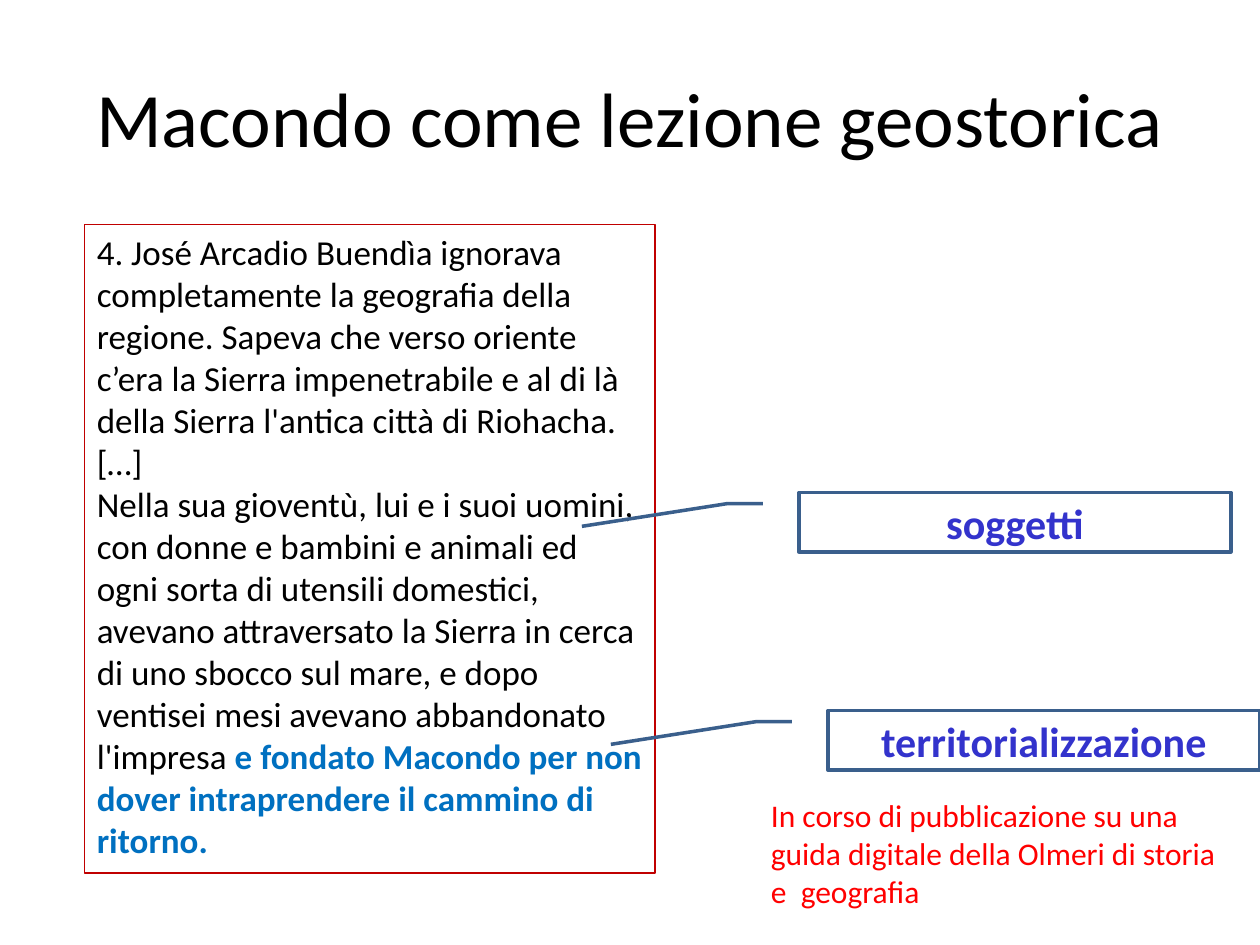
from pptx import Presentation
from pptx import util as u
from pptx.dml.color import RGBColor
from pptx.enum import shapes, text

COLORS = {
    "text": "000000", "paper": "FFFFFF", "frame": "C00000", "accent": "0070C0",
    "callout": "3A5F8C", "label": "3333CC", "note": "FF0000",
}
CALLOUT_ADJ = (0.188, -0.083, 0.188, -0.167, 0.57, -0.502)
PASSAGE = [
    [("4. José Arcadio Buendìa ignorava completamente la geografia della regione. "
      "Sapeva che verso oriente c’era la Sierra impenetrabile e al di là della "
      "Sierra l'antica città di Riohacha. […]", {})],
    [("Nella sua gioventù, lui e i suoi uomini, con donne e bambini e animali ed "
      "ogni sorta di utensili domestici, avevano attraversato la Sierra in cerca "
      "di uno sbocco sul mare, e dopo ventisei mesi avevano abbandonato l'impresa ", {}),
     ("e fondato Macondo per non dover intraprendere il cammino di ritorno.",
      {"color": "accent", "bold": True})],
]


def rgb(name):
    return RGBColor.from_string(COLORS[name])


def write(sp, paragraphs, size, color="text", bold=False,
          align=text.PP_ALIGN.LEFT, anchor=text.MSO_ANCHOR.TOP):
    tf = sp.text_frame
    tf.word_wrap = True
    tf.vertical_anchor = anchor
    for i, runs in enumerate(paragraphs):
        p = tf.paragraphs[0] if i == 0 else tf.add_paragraph()
        p.alignment = align
        for content, changes in runs:
            r = p.add_run()
            r.text = content
            values = {"name": "Calibri", "size": u.Pt(size), "bold": bold,
                      "color": color, **changes}
            r.font.color.rgb = rgb(values.pop("color"))
            for key, value in values.items():
                setattr(r.font, key, value)


def add_text(s, box, paragraphs, size, border=None, **style):
    sp = s.shapes.add_textbox(*map(u.Inches, box))
    if border:
        sp.line.color.rgb = rgb(border)
        sp.line.width = u.Pt(0.75)
    write(sp, paragraphs, size, **style)


def add_callout(s, left, top, label):
    box = map(u.Inches, (left, top, 3.43, 0.47))
    sp = s.shapes.add_shape(shapes.MSO_SHAPE.LINE_CALLOUT_2, *box)
    sp.shadow.inherit = False
    sp.fill.solid()
    sp.fill.fore_color.rgb = rgb("paper")
    sp.line.color.rgb = rgb("callout")
    sp.line.width = u.Pt(2)
    for i, value in enumerate(CALLOUT_ADJ):
        sp.adjustments[i] = value
    write(sp, [[(label, {})]], 24, "label", True,
          text.PP_ALIGN.CENTER, text.MSO_ANCHOR.MIDDLE)


def main():
    prs = Presentation()
    prs.slide_width, prs.slide_height = u.Inches(10), u.Inches(7.5)
    s = prs.slides.add_slide(prs.slide_layouts[6])
    add_text(s, (0.5, 0.3, 9, 1.25), [[("Macondo come lezione geostorica", {})]], 44,
             align=text.PP_ALIGN.CENTER, anchor=text.MSO_ANCHOR.MIDDLE)
    add_text(s, (0.67, 1.78, 4.53, 5.15), PASSAGE, 20, border="frame")
    add_callout(s, 6.57, 5.64, "territorializzazione")
    add_callout(s, 6.34, 3.91, "soggetti")
    add_text(s, (6.02, 6.27, 3.78, 1.01),
             [[("In corso di pubblicazione su una guida digitale della Olmeri "
                "di storia e  geografia", {})]], 18, color="note")
    prs.save("out.pptx")


if __name__ == "__main__":
    main()
